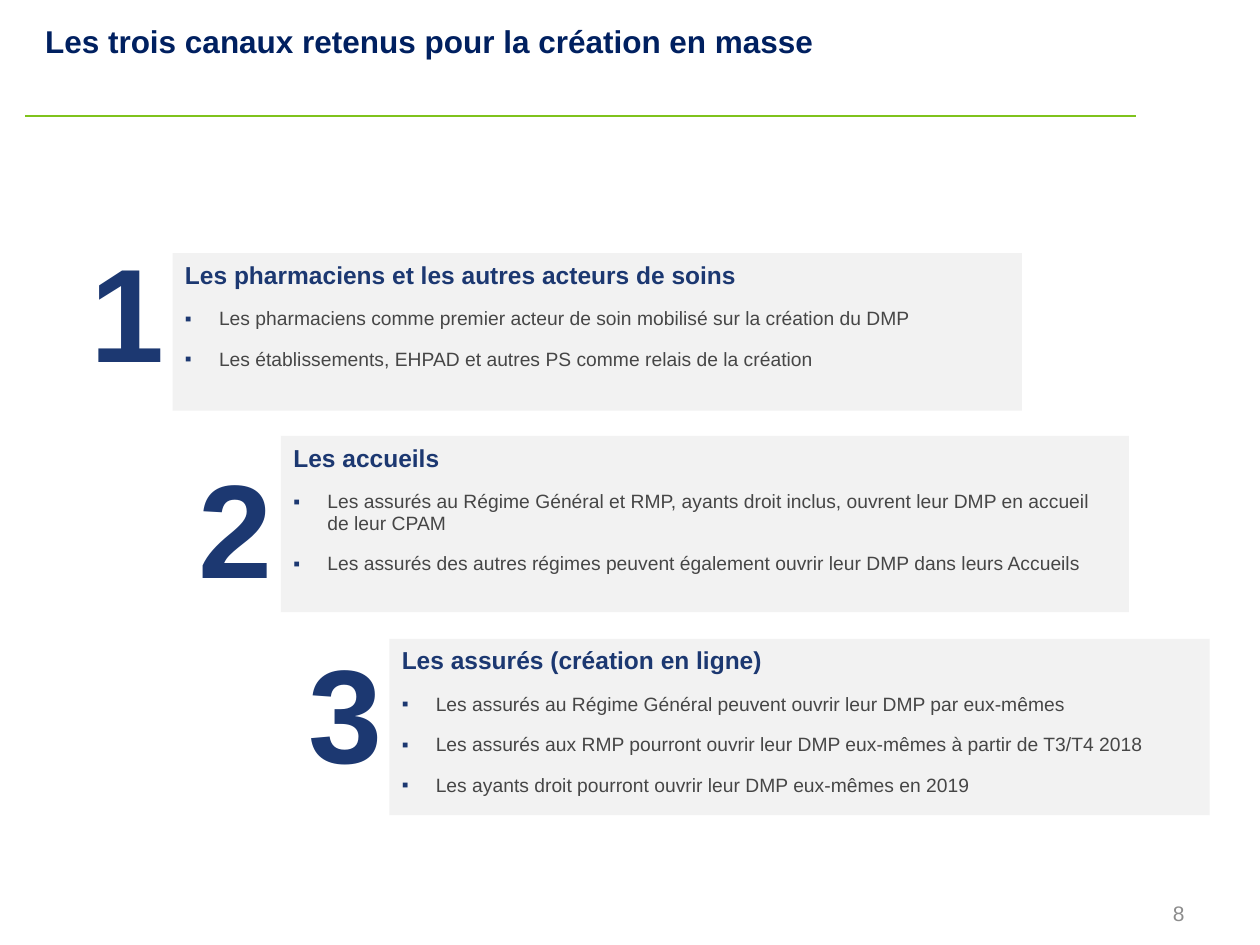
from lxml import etree
from pptx import Presentation
from pptx import util as u
from pptx.dml.color import RGBColor
from pptx.enum import shapes, text
from pptx.oxml.ns import qn

NAVY = "1C3871"


def color(value):
    return RGBColor.from_string(value)


def style(paragraph, size, value, bold=False, line=None, after=None):
    paragraph.font.name = "Arial"
    paragraph.font.size = u.Pt(size)
    paragraph.font.bold = bold
    paragraph.font.color.rgb = color(value)
    if line:
        paragraph.line_spacing = line
    if after:
        paragraph.space_after = u.Pt(after)


presentation = Presentation()
presentation.slide_width = u.Inches(10)
presentation.slide_height = u.Inches(7.5)
slide = presentation.slides.add_slide(presentation.slide_layouts[6])

# Green rule under the title
rule = slide.shapes.add_connector(
    shapes.MSO_CONNECTOR.STRAIGHT,
    u.Inches(0.2), u.Inches(0.92), u.Inches(9.02), u.Inches(0.92))
rule.line.color.rgb = color("7FC31C")
rule.line.width = u.Pt(1)
etree.SubElement(rule._element.spPr, qn("a:effectLst"))

# Title
title = slide.shapes.add_textbox(
    u.Inches(0.26), u.Inches(0.08), u.Inches(8.24), u.Inches(0.55))
frame = title.text_frame
frame.word_wrap = True
frame.vertical_anchor = text.MSO_ANCHOR.MIDDLE
frame.text = "Les trois canaux retenus pour la création en masse"
style(frame.paragraphs[0], 18, "002060", bold=True, line=0.8)

# Channels: number box, panel box, heading, bullets
channels = [
    ((0.72, 2.01, 0.59, 1.09), (1.37, 2.01, 6.74, 1.25),
     "Les pharmaciens et les autres acteurs de soins",
     ["Les pharmaciens comme premier acteur de soin mobilisé sur la création du DMP",
      "Les établissements, EHPAD et autres PS comme relais de la création"]),
    ((1.57, 3.7, 0.6, 1.13), (2.23, 3.46, 6.73, 1.4),
     "Les accueils",
     ["Les assurés au Régime Général et RMP, ayants droit inclus, ouvrent leur DMP en accueil de leur CPAM",
      "Les assurés des autres régimes peuvent également ouvrir leur DMP dans leurs Accueils"]),
    ((2.45, 5.19, 0.59, 1.09), (3.09, 5.07, 6.51, 1.4),
     "Les assurés (création en ligne)",
     ["Les assurés au Régime Général peuvent ouvrir leur DMP par eux-mêmes",
      "Les assurés aux RMP pourront ouvrir leur DMP eux-mêmes à partir de T3/T4 2018",
      "Les ayants droit pourront ouvrir leur DMP eux-mêmes en 2019"]),
]
for index, (number_box, panel_box, heading, bullets) in enumerate(channels, 1):
    # Large number
    number = slide.shapes.add_textbox(*map(u.Inches, number_box))
    frame = number.text_frame
    frame.word_wrap = False
    frame.auto_size = text.MSO_AUTO_SIZE.SHAPE_TO_FIT_TEXT
    frame.vertical_anchor = text.MSO_ANCHOR.MIDDLE
    frame.margin_left = frame.margin_right = 0
    frame.margin_top = frame.margin_bottom = 0
    frame.text = str(index)
    paragraph = frame.paragraphs[0]
    paragraph.alignment = text.PP_ALIGN.CENTER
    style(paragraph, 76, NAVY, bold=True, line=0.85, after=4.8)

    # Grey panel with heading
    panel = slide.shapes.add_shape(
        shapes.MSO_SHAPE.RECTANGLE, *map(u.Inches, panel_box))
    panel.shadow.inherit = False
    panel.fill.solid()
    panel.fill.fore_color.rgb = color("F2F2F2")
    panel.line.fill.background()
    frame = panel.text_frame
    frame.word_wrap = True
    frame.vertical_anchor = text.MSO_ANCHOR.TOP
    frame.margin_left = frame.margin_right = u.Inches(0.1)
    frame.margin_top = frame.margin_bottom = u.Inches(0.07)
    frame.text = heading
    paragraph = frame.paragraphs[0]
    paragraph.alignment = text.PP_ALIGN.LEFT
    style(paragraph, 14, NAVY, bold=True, line=0.95, after=10.5)

    # Square bullets
    for bullet in bullets:
        paragraph = frame.add_paragraph()
        paragraph.text = bullet
        paragraph.alignment = text.PP_ALIGN.LEFT
        properties = paragraph._p.get_or_add_pPr()
        properties.set("marL", str(u.Inches(0.27)))
        properties.set("indent", str(u.Inches(-0.27)))
        bullet_color = etree.SubElement(properties, qn("a:buClr"))
        etree.SubElement(bullet_color, qn("a:srgbClr"), val=NAVY)
        etree.SubElement(properties, qn("a:buFont"), typeface="Arial")
        etree.SubElement(properties, qn("a:buChar"), char="▪")
        style(paragraph, 11, "464646", line=0.95, after=10.5)

# Page number
page = slide.shapes.add_textbox(
    u.Inches(7.17), u.Inches(6.95), u.Inches(2.33), u.Inches(0.4))
frame = page.text_frame
frame.word_wrap = True
frame.vertical_anchor = text.MSO_ANCHOR.BOTTOM
frame.margin_bottom = 0
frame.text = "8"
frame.paragraphs[0].alignment = text.PP_ALIGN.RIGHT
style(frame.paragraphs[0], 12, "8C8C8C")

presentation.save("out.pptx")
